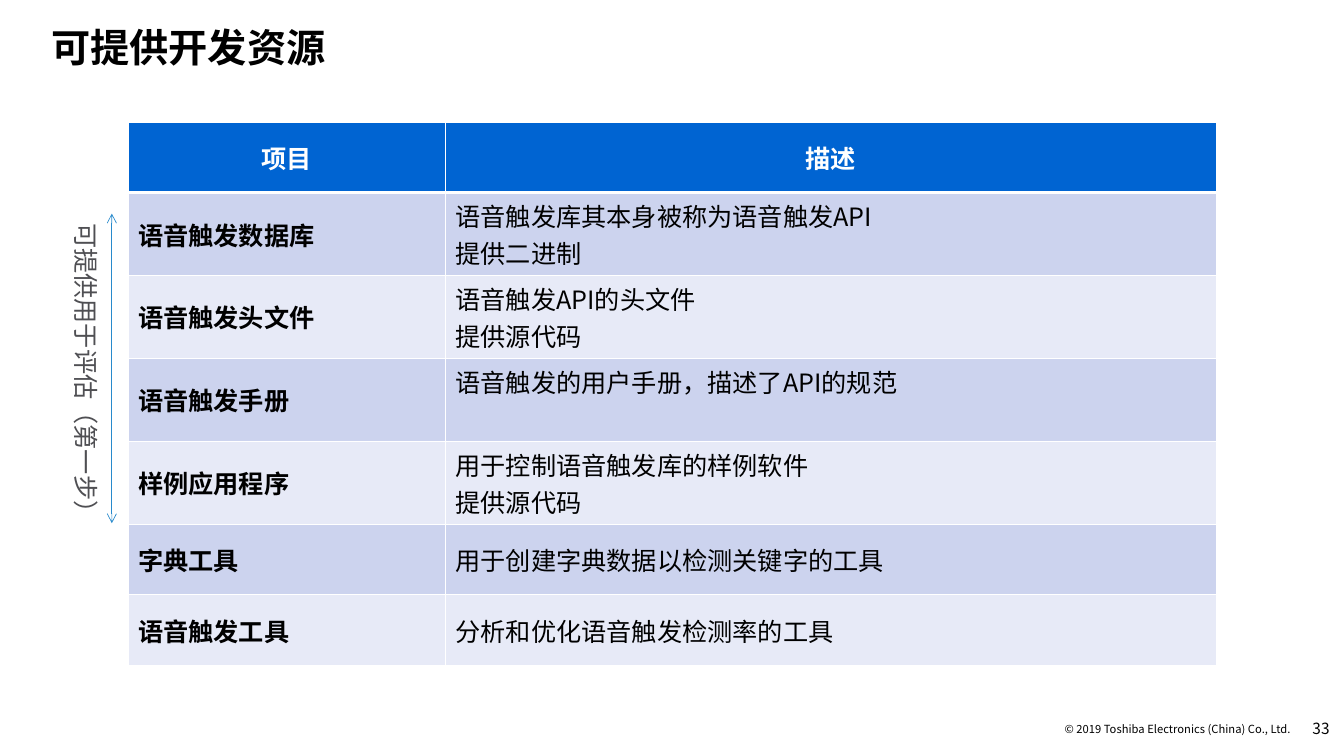
from lxml import etree
from pptx import Presentation
from pptx.dml.color import RGBColor
from pptx.enum import shapes, text
from pptx.oxml import ns
from pptx.util import Pt

BLACK = RGBColor(0x00, 0x00, 0x00)
WHITE = RGBColor(0xFF, 0xFF, 0xFF)
GRAY = RGBColor(0x4F, 0x4F, 0x53)
HEADER_BLUE = RGBColor(0x00, 0x64, 0xD2)
ARROW_BLUE = RGBColor(0x28, 0x8A, 0xCC)
BANDS = [RGBColor(0xCC, 0xD3, 0xEE), RGBColor(0xE7, 0xEA, 0xF7)]

LEFT, CENTER, RIGHT = text.PP_ALIGN.LEFT, text.PP_ALIGN.CENTER, text.PP_ALIGN.RIGHT
TOP, MIDDLE, BOTTOM = text.MSO_ANCHOR.TOP, text.MSO_ANCHOR.MIDDLE, text.MSO_ANCHOR.BOTTOM

RESOURCES = [
    ("项目", "描述"),
    ("语音触发数据库", "语音触发库其本身被称为语音触发API\n提供二进制"),
    ("语音触发头文件", "语音触发API的头文件\n提供源代码"),
    ("语音触发手册", "语音触发的用户手册，描述了API的规范"),
    ("样例应用程序", "用于控制语音触发库的样例软件\n提供源代码"),
    ("字典工具", "用于创建字典数据以检测关键字的工具"),
    ("语音触发工具", "分析和优化语音触发检测率的工具"),
]
COLUMN_WIDTHS = [226.8, 550.8]
ROW_HEIGHTS = [50.4] + [59.25] * 4 + [50.4] * 2
MANUAL_ROW = 3


def add_element(parent, tag, **attributes):
    return etree.SubElement(parent, ns.qn(tag), attributes)


class SlideBuilder:
    body_font = "Noto Sans CJK SC"
    footer_font = "Noto Sans CJK JP"

    def __init__(self, slide):
        self.slide = slide

    def format_text(self, text_frame, size, color, bold=False, align=LEFT, font=body_font):
        for paragraph in text_frame.paragraphs:
            paragraph.alignment = align
            for run in paragraph.runs:
                run.font.name = font
                run.font.size = Pt(size)
                run.font.bold = bold
                run.font.color.rgb = color
                add_element(run.font._element, "a:ea", typeface=font)

    def add_text(self, content, box, size, color=BLACK, margins=(0, 0, 0, 0),
                 anchor=MIDDLE, wrap=True, rotation=0, line_spacing=1.0, **style):
        shape = self.slide.shapes.add_textbox(*map(Pt, box))
        shape.rotation = rotation
        frame = shape.text_frame
        frame.word_wrap = wrap
        frame.vertical_anchor = anchor
        (frame.margin_left, frame.margin_top,
         frame.margin_right, frame.margin_bottom) = map(Pt, margins)
        frame.text = content
        frame.paragraphs[0].line_spacing = line_spacing
        self.format_text(frame, size, color, **style)

    def set_borders(self, cell, bottom_width):
        properties = cell._tc.get_or_add_tcPr()
        for side, width in (("L", 1), ("R", 1), ("T", 1), ("B", bottom_width)):
            line = add_element(properties, f"a:ln{side}", w=str(Pt(width)))
            fill = add_element(line, "a:solidFill")
            add_element(fill, "a:srgbClr", val=str(WHITE))

    def add_table(self, rows, left, top, widths, heights):
        frame = self.slide.shapes.add_table(
            len(rows), len(widths), Pt(left), Pt(top), Pt(sum(widths)), Pt(sum(heights)))
        table = frame.table
        for column, width in zip(table.columns, widths):
            column.width = Pt(width)
        for row_index, (row, height) in enumerate(zip(rows, heights)):
            table.rows[row_index].height = Pt(height)
            header = row_index == 0
            for column_index, content in enumerate(row):
                cell = table.cell(row_index, column_index)
                cell.text_frame.text = content
                top_aligned = row_index == MANUAL_ROW and column_index == 1
                cell.vertical_anchor = TOP if top_aligned else MIDDLE
                self.set_borders(cell, 3 if header else 1)
                cell.fill.solid()
                cell.fill.fore_color.rgb = HEADER_BLUE if header else BANDS[(row_index - 1) % 2]
                self.format_text(cell.text_frame, 18, WHITE if header else BLACK,
                                 bold=header or column_index == 0,
                                 align=CENTER if header else LEFT)

    def add_double_arrow(self, x, top, bottom):
        connector = self.slide.shapes.add_connector(
            shapes.MSO_CONNECTOR.STRAIGHT, Pt(x), Pt(top), Pt(x), Pt(bottom))
        connector.line.color.rgb = ARROW_BLUE
        connector.line.width = Pt(0.5)
        line = connector.line._get_or_add_ln()
        add_element(line, "a:headEnd", type="arrow")
        add_element(line, "a:tailEnd", type="arrow")
        add_element(connector._element.spPr, "a:effectLst")


def main():
    presentation = Presentation()
    presentation.slide_width = Pt(960)
    presentation.slide_height = Pt(540)
    builder = SlideBuilder(presentation.slides.add_slide(presentation.slide_layouts[6]))

    builder.add_text("33", (916.6, 506.2, 33.1, 28.8), 11,
                     align=RIGHT, font=builder.footer_font)
    builder.add_text("© 2019 Toshiba Electronics (China) Co., Ltd.", (744.5, 516.2, 177.8, 9.4), 8,
                     wrap=False, align=RIGHT, font=builder.footer_font)
    builder.add_text("可提供开发资源", (0, 0, 900.7, 59), 28, margins=(36.7, 8.6, 33.8, 8.6),
                     anchor=BOTTOM, line_spacing=0.9, bold=True)
    builder.add_table(RESOURCES, 91.4, 87.1, COLUMN_WIDTHS, ROW_HEIGHTS)
    builder.add_double_arrow(79.9, 152.6, 373.7)
    builder.add_text("可提供用于评估（第一步）", (-54.7, 254.2, 232.6, 28.8), 18, GRAY,
                     margins=(7.2, 3.6, 7.2, 3.6), anchor=TOP, wrap=False, rotation=90)

    presentation.save("out.pptx")


if __name__ == "__main__":
    main()
